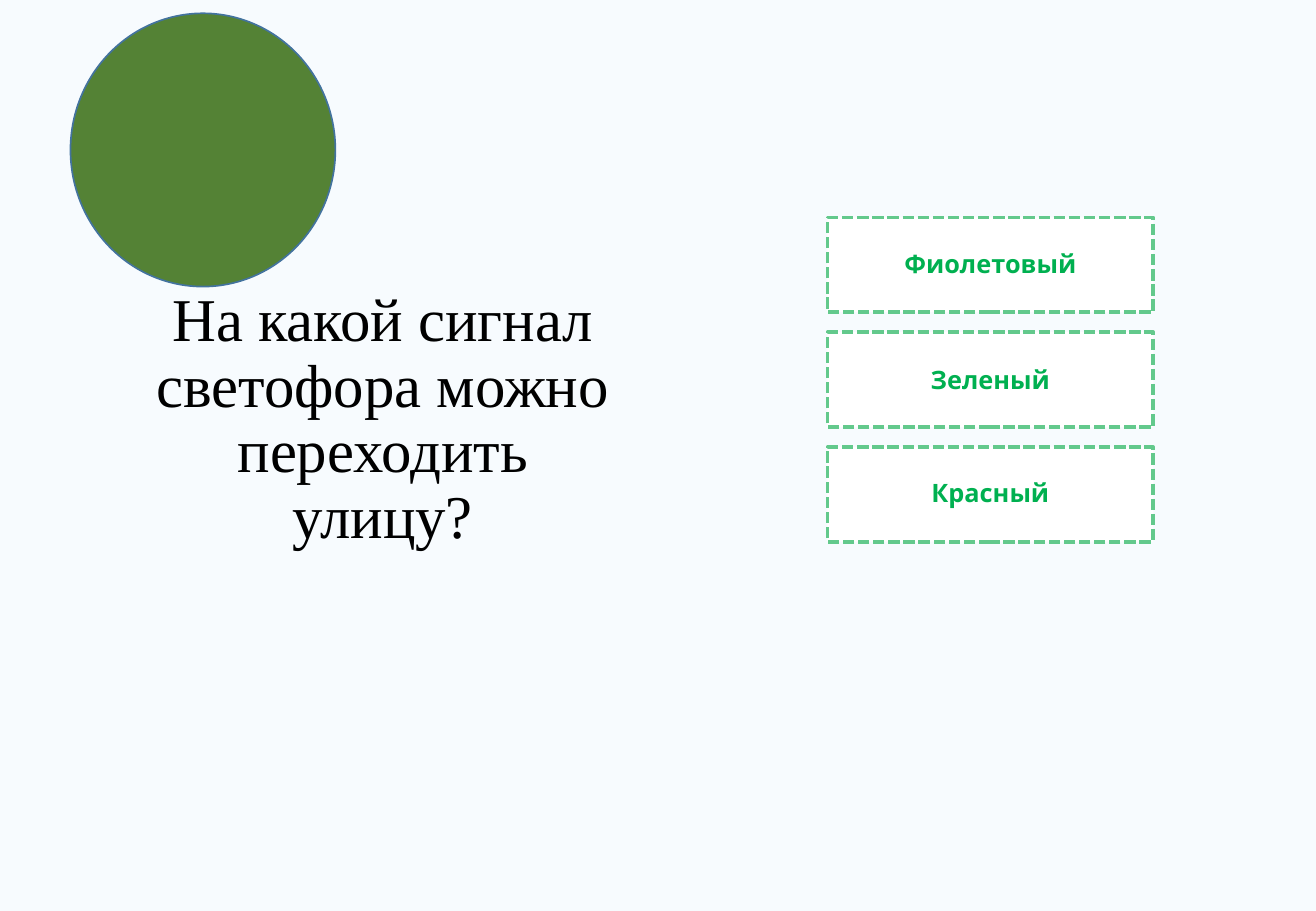
from dataclasses import dataclass

from lxml import etree
from pptx import Presentation
from pptx.dml.color import RGBColor
from pptx.enum.dml import MSO_LINE
from pptx.enum.shapes import MSO_SHAPE
from pptx.enum.text import MSO_ANCHOR, MSO_AUTO_SIZE, PP_ALIGN
from pptx.oxml import parse_xml
from pptx.oxml.ns import nsdecls
from pptx.shapes.autoshape import Shape
from pptx.slide import Slide
from pptx.util import Inches, Pt

RECTANGLE = MSO_SHAPE.RECTANGLE
CIRCLE = MSO_SHAPE.FLOWCHART_CONNECTOR
DASHED = MSO_LINE.SQUARE_DOT
CENTER = PP_ALIGN.CENTER
MIDDLE = MSO_ANCHOR.MIDDLE
NO_AUTOFIT = MSO_AUTO_SIZE.NONE

SLIDE_WIDTH, SLIDE_HEIGHT = 10.83, 7.5
ANSWER_LEFT, ANSWER_WIDTH, ANSWER_HEIGHT = 6.81, 2.68, 0.78
FIRST_ANSWER_TOP, LAST_ANSWER_TOP = 1.79, 3.68

QUESTION_FONT = {"name": "Times New Roman", "size": Pt(36), "bold": False}
ANSWER_FONT = {"name": "Cabin", "size": Pt(15), "bold": True}


@dataclass(frozen=True)
class Box:
    left: float
    top: float
    width: float
    height: float


@dataclass(frozen=True)
class Answer:
    text: str
    line_spacing: float


ANSWERS = [
    Answer("Фиолетовый", 0.9),
    Answer("Зеленый", 1.0),
    Answer("Красный", 0.9),
]


def color(hex_value: str) -> RGBColor:
    return RGBColor.from_string(hex_value)


def text_shadow() -> etree._Element:
    return parse_xml(
        f'<a:effectLst {nsdecls("a")}>'
        '<a:outerShdw blurRad="38100" dist="38100" dir="2700000" algn="tl">'
        '<a:srgbClr val="000000"><a:alpha val="43000"/></a:srgbClr>'
        "</a:outerShdw></a:effectLst>"
    )


def write_text(shape: Shape, text: str, font_format: dict, hex_color: str,
               line_spacing: float, shadow: bool = False) -> None:
    frame = shape.text_frame
    frame.word_wrap = True
    frame.auto_size = NO_AUTOFIT
    frame.vertical_anchor = MIDDLE
    paragraph = frame.paragraphs[0]
    paragraph.alignment = CENTER
    paragraph.line_spacing = line_spacing
    paragraph.space_before = Pt(0)
    run = paragraph.add_run()
    run.text = text
    run.font.fill.solid()
    run.font.fill.fore_color.rgb = color(hex_color)
    if shadow:
        run.font._element.append(text_shadow())
    for attribute, value in font_format.items():
        setattr(run.font, attribute, value)


def place(shape: Shape, box: Box) -> None:
    for attribute in ("left", "top", "width", "height"):
        setattr(shape, attribute, Inches(getattr(box, attribute)))


def add_figure(slide: Slide, kind: MSO_SHAPE, box: Box, fill: str,
               line: str, line_width: float) -> Shape:
    figure = slide.shapes.add_shape(kind, 0, 0, 0, 0)
    place(figure, box)
    figure.shadow.inherit = False
    figure.fill.solid()
    figure.fill.fore_color.rgb = color(fill)
    figure.line.color.rgb = color(line)
    figure.line.width = Pt(line_width)
    return figure


def add_answer(slide: Slide, answer: Answer, top: float) -> None:
    box = Box(ANSWER_LEFT, top, ANSWER_WIDTH, ANSWER_HEIGHT)
    card = add_figure(slide, RECTANGLE, box, "FFFFFF", "63C98C", 2.25)
    card.line.dash_style = DASHED
    write_text(card, answer.text, ANSWER_FONT, "00B050", answer.line_spacing)


def main() -> None:
    presentation = Presentation()
    presentation.slide_width = Inches(SLIDE_WIDTH)
    presentation.slide_height = Inches(SLIDE_HEIGHT)
    slide = presentation.slides.add_slide(presentation.slide_layouts[5])
    slide.background.fill.solid()
    slide.background.fill.fore_color.rgb = color("F7FBFE")

    # Question
    question = slide.shapes.title
    place(question, Box(1.15, 1.79, 4, 3.34))
    write_text(question, "На какой сигнал светофора можно переходить улицу?",
               QUESTION_FONT, "000000", 0.9, shadow=True)

    # Answers, evenly spaced from first to last
    pitch = (LAST_ANSWER_TOP - FIRST_ANSWER_TOP) / (len(ANSWERS) - 1)
    for index, answer in enumerate(ANSWERS):
        add_answer(slide, answer, FIRST_ANSWER_TOP + index * pitch)

    # Green traffic signal
    add_figure(slide, CIRCLE, Box(0.58, 0.11, 2.18, 2.25), "548235", "43739E", 1)

    presentation.save("out.pptx")


if __name__ == "__main__":
    main()
